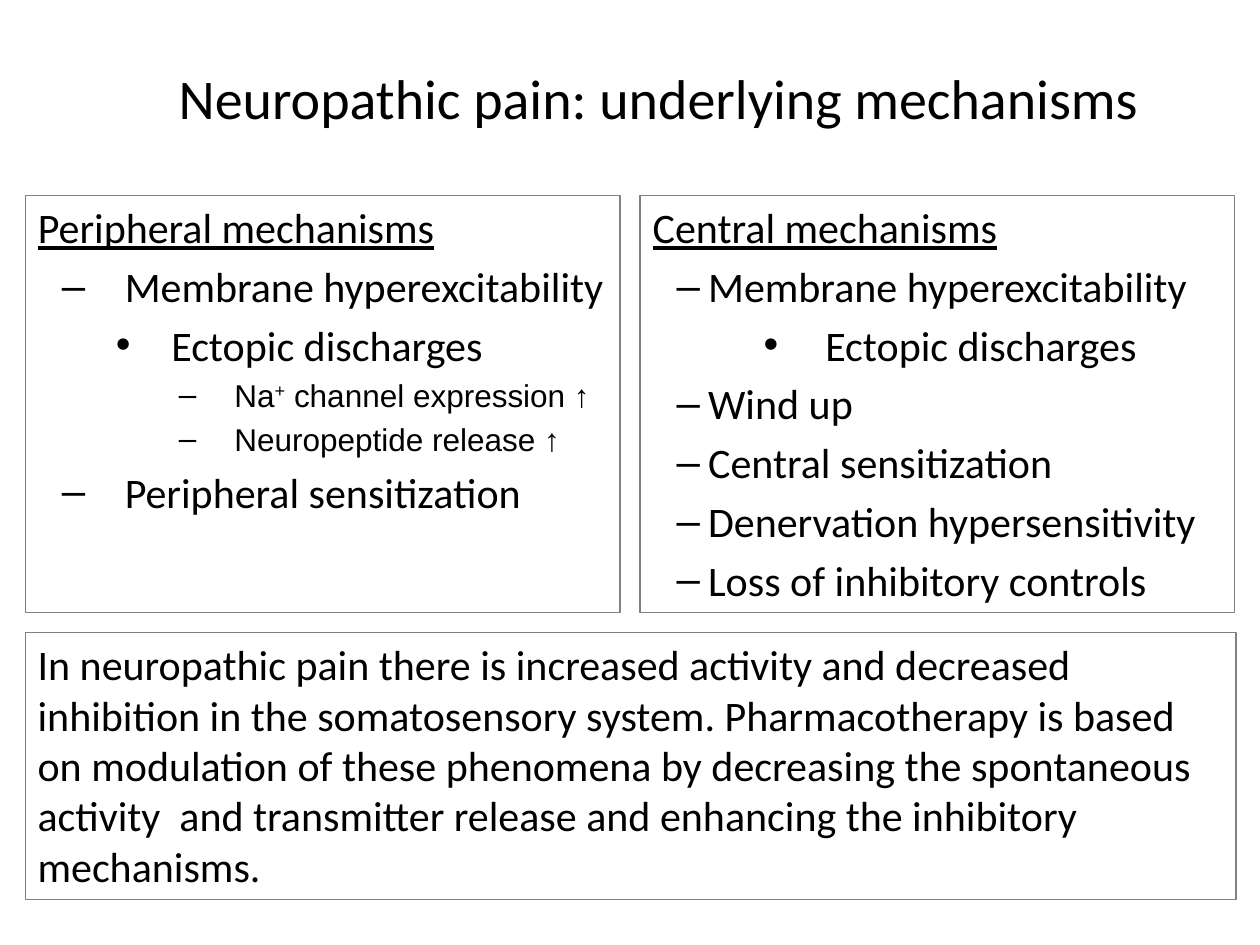
import pptx
import pptx.dml.color
import pptx.enum.shapes
import pptx.enum.text
import pptx.oxml
import pptx.oxml.ns
import pptx.util

Inches = pptx.util.Inches
Pt = pptx.util.Pt
BLACK = pptx.dml.color.RGBColor(0, 0, 0)
GRAY = pptx.dml.color.RGBColor(0x80, 0x80, 0x80)

BODY_FONT = {"name": "Calibri", "size": Pt(24)}
HEADING_FONT = BODY_FONT | {"underline": True}
TITLE_FONT = BODY_FONT | {"size": Pt(32)}
DETAIL_FONT = {"name": "Arial", "size": Pt(18)}

PANEL_TOP, PANEL_WIDTH, PANEL_HEIGHT = 1.55, 4.72, 3.31

# Each item is (level, text runs); a run starting with ^ is superscript
PERIPHERAL = [
    (0, ["Peripheral mechanisms"]),
    (1, ["Membrane hyperexcitability"]),
    (2, ["Ectopic discharges"]),
    (3, ["Na", "^+", " channel expression ↑"]),
    (3, ["Neuropeptide release ↑"]),
    (1, ["Peripheral sensitization"]),
]
CENTRAL = [
    (0, ["Central mechanisms"]),
    (1, ["Membrane hyperexcitability"]),
    (2, ["Ectopic discharges"]),
    (1, ["Wind up"]),
    (1, ["Central sensitization"]),
    (1, ["Denervation hypersensitivity"]),
    (1, ["Loss of inhibitory controls"]),
]
# Left margin and first-line indent in inches, by level
PERIPHERAL_INDENTS = [(0.58, -0.58), (0.69, -0.5), (1.06, -0.44), (1.56, -0.44)]
CENTRAL_INDENTS = [(0.58, -0.58), (0.44, -0.25), (1.37, -0.49)]
LEVEL_FONTS = [HEADING_FONT, BODY_FONT, BODY_FONT, DETAIL_FONT]

SUMMARY = (
    "In neuropathic pain there is increased activity and decreased inhibition "
    "in the somatosensory system. Pharmacotherapy is based on modulation of these "
    "phenomena by decreasing the spontaneous activity  and transmitter release "
    "and enhancing the inhibitory mechanisms."
)


def set_values(target, values):
    for name, value in values.items():
        setattr(target, name, value)


def place(shape, left, top, width, height):
    set_values(shape, {"left": Inches(left), "top": Inches(top),
                       "width": Inches(width), "height": Inches(height)})


def add_run(paragraph, text, font_values):
    run = paragraph.add_run()
    run.text = text.removeprefix("^")
    set_values(run.font, font_values)
    run.font.color.rgb = BLACK
    if text.startswith("^"):
        run._r.get_or_add_rPr().set("baseline", "30000")


def outline(shape):
    shape.line.color.rgb = GRAY
    shape.line.width = Pt(0.75)


def set_indent(paragraph, margin, indent):
    properties = paragraph._p.get_or_add_pPr()
    properties.set("marL", str(Inches(margin)))
    properties.set("indent", str(Inches(indent)))
    return properties


def fill_title(title):
    place(title, 0.46, 0.28, 9.54, 1.06)
    set_values(title.text_frame, {
        "auto_size": pptx.enum.text.MSO_AUTO_SIZE.NONE,
        "vertical_anchor": pptx.enum.text.MSO_ANCHOR.MIDDLE})
    paragraph = title.text_frame.paragraphs[0]
    set_values(paragraph, {"alignment": pptx.enum.text.PP_ALIGN.CENTER,
                           "line_spacing": 0.85})
    add_run(paragraph, "Neuropathic pain: underlying mechanisms", TITLE_FONT)


def fill_panel(panel, left, items, indents):
    place(panel, left, PANEL_TOP, PANEL_WIDTH, PANEL_HEIGHT)
    outline(panel)
    frame = panel.text_frame
    frame.auto_size = pptx.enum.text.MSO_AUTO_SIZE.NONE
    for number, (level, runs) in enumerate(items):
        paragraph = frame.add_paragraph() if number else frame.paragraphs[0]
        paragraph.level = level
        properties = set_indent(paragraph, *indents[level])
        # Headings carry no bullet; lower levels take the template's bullets
        if level == 0:
            properties.append(pptx.oxml.parse_xml(
                f"<a:buNone {pptx.oxml.ns.nsdecls('a')}/>"))
        for text in runs:
            add_run(paragraph, text, LEVEL_FONTS[level])


def add_summary(slide):
    box = slide.shapes.add_textbox(Inches(0.2), Inches(5.02),
                                   Inches(9.61), Inches(2.12))
    outline(box)
    set_values(box.text_frame, {
        "word_wrap": True,
        "auto_size": pptx.enum.text.MSO_AUTO_SIZE.SHAPE_TO_FIT_TEXT})
    add_run(box.text_frame.paragraphs[0], SUMMARY, BODY_FONT)


def main():
    presentation = pptx.Presentation()
    set_values(presentation, {"slide_width": Inches(10), "slide_height": Inches(7.5)})
    # Two Content layout: a title and two body lists
    slide = presentation.slides.add_slide(presentation.slide_layouts[3])
    fill_title(slide.shapes.title)
    fill_panel(slide.placeholders[1], 0.2, PERIPHERAL, PERIPHERAL_INDENTS)
    fill_panel(slide.placeholders[2], 5.08, CENTRAL, CENTRAL_INDENTS)
    add_summary(slide)
    presentation.save("out.pptx")


if __name__ == "__main__":
    main()
